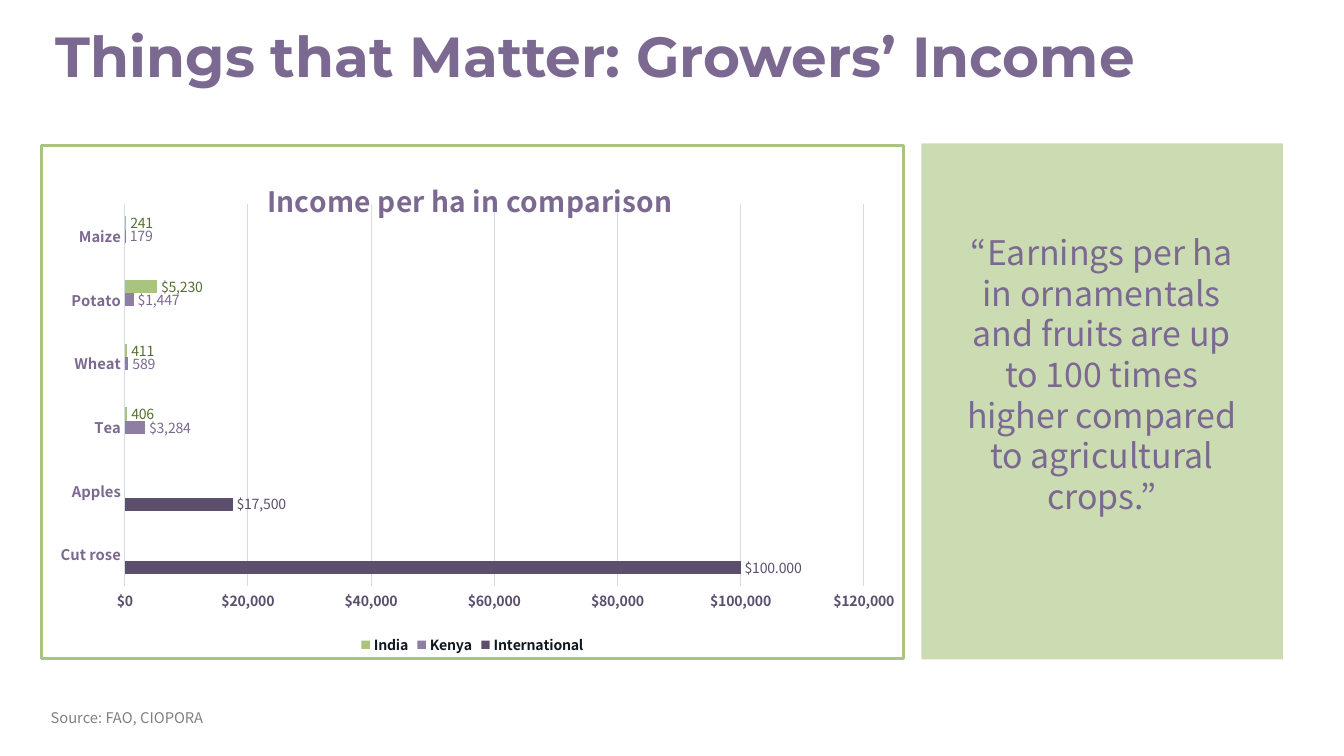
import lxml.etree
import pptx
import pptx.chart.data
import pptx.dml.color
import pptx.enum.chart
import pptx.enum.shapes
import pptx.enum.text
import pptx.oxml
import pptx.oxml.ns
import pptx.util

Inches = pptx.util.Inches
Pt = pptx.util.Pt
qn = pptx.oxml.ns.qn

COLORS = {
    "purple": "7C6992",
    "dark_purple": "5C4F6D",
    "mid_purple": "8F7EA3",
    "green": "A9C47F",
    "dark_green": "566F33",
    "pale_green": "CBDCB2",
    "grid": "D1DCE8",
    "ink": "101820",
    "gray": "808080",
}
BODY_FONT = "Noto Sans CJK KR"
TITLE_FONT = "Montserrat"
DOLLARS = "[$$-409]#,##0"

CROPS = ["Cut rose", "Apples", "Tea", "Wheat", "Potato", "Maize"]
INCOMES = [
    {"region": "International", "values": [100000, 17500, None, None, None, None],
     "bar": "dark_purple", "label": "dark_purple", "format": DOLLARS,
     "custom": {0: "$100.000", 1: "$17,500"}},
    {"region": "Kenya", "values": [None, None, 3284, 589, 1447, 179],
     "bar": "mid_purple", "label": "purple", "format": "General",
     "custom": {2: "$3,284", 4: "$1,447"}},
    {"region": "India", "values": [None, None, 406, 411, 5230, 241],
     "bar": "green", "label": "dark_green", "format": "General",
     "custom": {4: "$5,230"}},
]


def rgb(color):
    return pptx.dml.color.RGBColor.from_string(COLORS[color])


def style_font(font, size, color, bold=False, name=BODY_FONT):
    for attribute, value in {"size": Pt(size), "bold": bold, "name": name}.items():
        setattr(font, attribute, value)
    font.color.rgb = rgb(color)


def style_line(line, color, width):
    line.color.rgb = rgb(color)
    line.width = Pt(width)


def set_layout(parent, index, **fractions):
    """Place a chart part by fractions of the chart area."""
    for old_layout in parent.findall(qn("c:layout")):
        parent.remove(old_layout)
    layout = lxml.etree.Element(qn("c:layout"))
    manual = lxml.etree.SubElement(layout, qn("c:manualLayout"))
    if "w" in fractions:
        lxml.etree.SubElement(manual, qn("c:layoutTarget"), val="inner")
    for side in ("xMode", "yMode"):
        lxml.etree.SubElement(manual, qn(f"c:{side}"), val="edge")
    for side, fraction in fractions.items():
        lxml.etree.SubElement(manual, qn(f"c:{side}"), val=str(fraction))
    parent.insert(index, layout)


def frame_chart(chart, color, width):
    """Draw a border round the chart area."""
    border = pptx.oxml.parse_xml(
        '<c:spPr xmlns:c="http://schemas.openxmlformats.org/drawingml/2006/chart"'
        ' xmlns:a="http://schemas.openxmlformats.org/drawingml/2006/main">'
        f'<a:noFill/><a:ln w="{Pt(width)}"><a:solidFill>'
        f'<a:srgbClr val="{COLORS[color]}"/></a:solidFill></a:ln></c:spPr>')
    chart.element.find(qn("c:chart")).addnext(border)


def add_title(slide, left, top, width, height):
    title = slide.shapes.title
    title.left, title.top, title.width, title.height = left, top, width, height
    frame = title.text_frame
    frame.text = "Things that Matter: Growers’ Income"
    format_values = {
        "margin_left": 0, "margin_right": 0, "margin_top": 0, "margin_bottom": 0,
        "word_wrap": True,
        "auto_size": pptx.enum.text.MSO_AUTO_SIZE.NONE,
        "vertical_anchor": pptx.enum.text.MSO_ANCHOR.MIDDLE,
    }
    for attribute, value in format_values.items():
        setattr(frame, attribute, value)
    heading = frame.paragraphs[0]
    heading.alignment = pptx.enum.text.PP_ALIGN.LEFT
    heading.line_spacing = 0.9
    style_font(heading.runs[0].font, 40, "purple", True, TITLE_FONT)


def label_bars(series, income):
    outside = pptx.enum.chart.XL_LABEL_POSITION.OUTSIDE_END
    labels = series.data_labels
    format_values = {
        "show_value": True, "position": outside,
        "number_format": income["format"], "number_format_is_linked": False,
    }
    for attribute, value in format_values.items():
        setattr(labels, attribute, value)
    style_font(labels.font, 10, income["label"])
    for point, text in income["custom"].items():
        label = series.points[point].data_label
        label.text_frame.text = text
        style_font(label.text_frame.paragraphs[0].runs[0].font, 10, income["label"])
        label.position = outside


def style_axes(chart):
    crops, dollars = chart.category_axis, chart.value_axis
    for axis in (crops, dollars):
        axis.major_tick_mark = pptx.enum.chart.XL_TICK_MARK.NONE
        axis.minor_tick_mark = pptx.enum.chart.XL_TICK_MARK.NONE
    style_font(crops.tick_labels.font, 10.5, "purple", True)
    style_line(crops.format.line, "grid", 0.75)

    for attribute, value in {"minimum_scale": 0, "maximum_scale": 120000,
                             "major_unit": 20000, "has_major_gridlines": True}.items():
        setattr(dollars, attribute, value)
    style_line(dollars.major_gridlines.format.line, "grid", 0.75)
    dollars.format.line.fill.background()
    dollars.tick_labels.number_format = DOLLARS
    dollars.tick_labels.number_format_is_linked = False
    style_font(dollars.tick_labels.font, 10, "dark_purple", True)


def add_income_chart(slide, left, top, width, height):
    income_data = pptx.chart.data.CategoryChartData()
    income_data.categories = CROPS
    for income in INCOMES:
        income_data.add_series(income["region"], income["values"])
    chart = slide.shapes.add_chart(
        pptx.enum.chart.XL_CHART_TYPE.BAR_CLUSTERED,
        left, top, width, height, income_data).chart
    style_font(chart.font, 10, "ink", name="Calibri")
    frame_chart(chart, "green", 2.25)

    chart.has_title = True
    heading = chart.chart_title.text_frame
    heading.text = "Income per ha in comparison"
    style_font(heading.paragraphs[0].runs[0].font, 20, "purple", True)
    set_layout(chart.chart_title._element, 1, x=0.256, y=0.05)

    chart.has_legend = True
    chart.legend.position = pptx.enum.chart.XL_LEGEND_POSITION.BOTTOM
    chart.legend.include_in_layout = False
    style_font(chart.legend.font, 10, "ink", True)

    bars = chart.plots[0]
    bars.gap_width = 182
    bars.vary_by_categories = False
    for series, income in zip(bars.series, INCOMES):
        series.format.fill.solid()
        series.format.fill.fore_color.rgb = rgb(income["bar"])
        series.invert_if_negative = False
        label_bars(series, income)
    style_axes(chart)
    plot_area = chart.element.find(qn("c:chart")).find(qn("c:plotArea"))
    set_layout(plot_area, 0, x=0.097, y=0.114, w=0.857, h=0.745)


def add_quote(slide, left, top, width, height):
    panel = slide.shapes.add_shape(
        pptx.enum.shapes.MSO_SHAPE.RECTANGLE, left, top, width, height)
    panel.shadow.inherit = False
    panel.fill.solid()
    panel.fill.fore_color.rgb = rgb("pale_green")
    panel.line.fill.background()

    inset = Inches(0.36)
    quote = slide.shapes.add_textbox(
        left + Inches(0.31), top + inset, Inches(2.93), height - inset).text_frame
    quote.word_wrap = True
    quote.margin_top = Inches(0.51)
    quote.text = ("“Earnings per ha in ornamentals and fruits are up to 100 times "
                  "higher compared to agricultural crops.”")
    quote.paragraphs[0].alignment = pptx.enum.text.PP_ALIGN.CENTER
    style_font(quote.paragraphs[0].runs[0].font, 24, "purple")


def add_source(slide, left, top, width, height):
    source = slide.shapes.add_textbox(left, top, width, height).text_frame
    source.word_wrap = True
    source.text = "Source: FAO, CIOPORA"
    style_font(source.paragraphs[0].runs[0].font, 10.4, "gray")


def main():
    deck = pptx.Presentation()
    deck.slide_width, deck.slide_height = Inches(13.23), Inches(7.44)
    slide = deck.slides.add_slide(deck.slide_layouts.get_by_name("Title Only"))
    regions = [
        (add_quote, (9.07, 1.41, 3.56, 5.08)),
        (add_income_chart, (0.39, 1.42, 8.52, 5.08)),
        (add_source, (0.4, 6.93, 4.19, 0.28)),
        (add_title, (0.55, -0.02, 11.78, 1.21)),
    ]
    for add_region, box in regions:
        add_region(slide, *map(Inches, box))
    deck.save("out.pptx")


if __name__ == "__main__":
    main()
